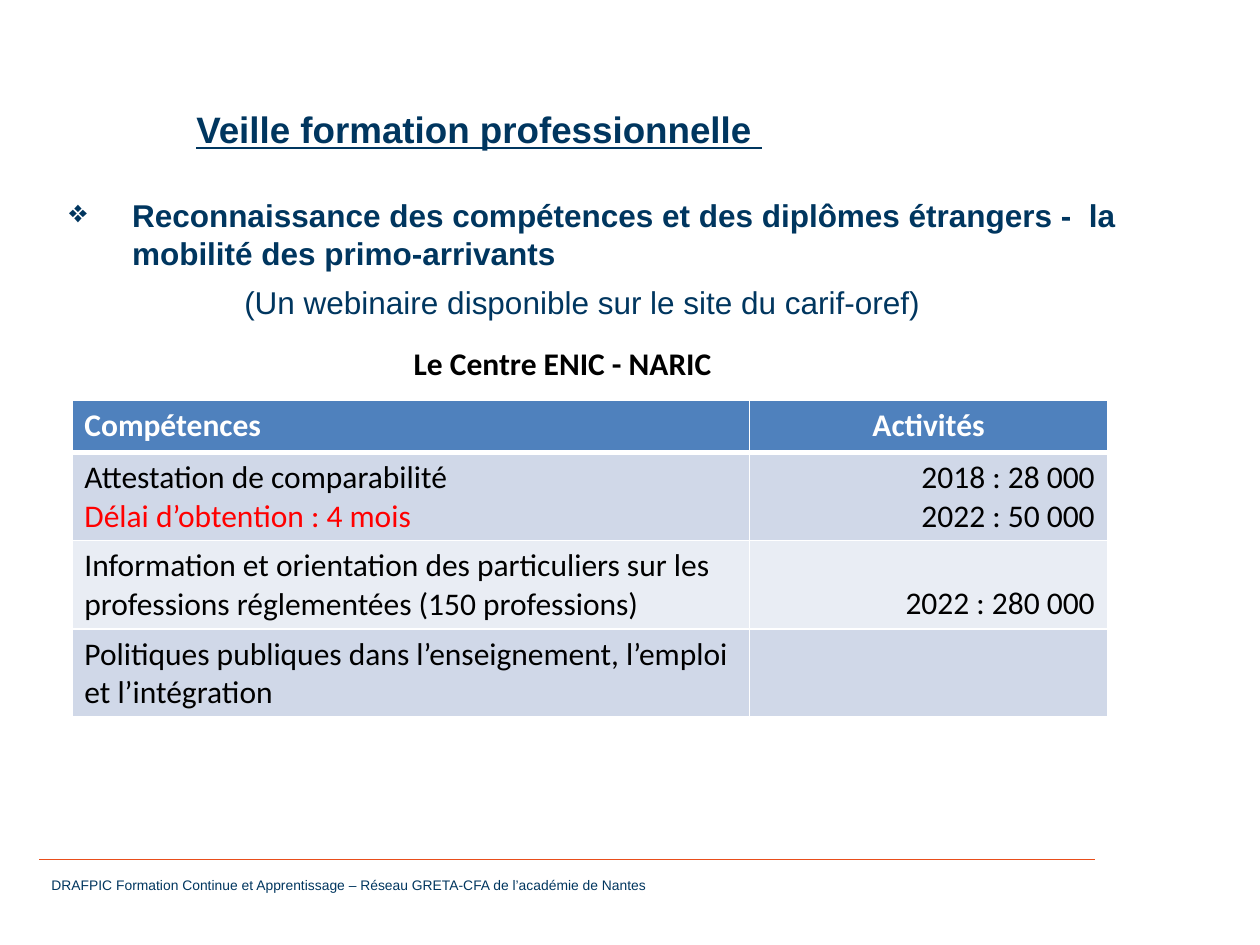
from dataclasses import dataclass

from lxml.etree import SubElement
from pptx import Presentation
from pptx.dml.color import RGBColor as Color
from pptx.enum.shapes import MSO_CONNECTOR as Connector
from pptx.enum.text import MSO_ANCHOR as Anchor, PP_ALIGN as Align
from pptx.oxml.ns import qn
from pptx.util import Inches, Pt


@dataclass(frozen=True)
class Theme:
    navy: str = "00365F"
    orange: str = "E94E1B"
    red: str = "FF0000"
    black: str = "000000"
    white: str = "FFFFFF"
    header: str = "4F81BD"
    bands: tuple = ("D0D8E8", "E9EDF4")
    heading: str = "Arial"
    body: str = "Calibri"
    title_size: float = 21
    text_size: float = 18
    footer_size: float = 7.9


THEME = Theme()

TITLE = "Veille formation professionnelle "
TOPIC = "Reconnaissance des compétences et des diplômes étrangers -  la mobilité des primo-arrivants"
WEBINAR = "(Un webinaire disponible sur le site du carif-oref)"
CENTRE = "Le Centre ENIC - NARIC"
FOOTER = "DRAFPIC Formation Continue et Apprentissage – Réseau GRETA-CFA de l’académie de Nantes"
DEADLINE = "Délai d’obtention : 4 mois"
ROWS = [
    (["Compétences"], ["Activités"]),
    (["Attestation de comparabilité", DEADLINE], ["2018 : 28 000", "2022 : 50 000"]),
    (["Information et orientation des particuliers sur les professions réglementées (150 professions)"],
     ["2022 : 280 000"]),
    (["Politiques publiques dans l’enseignement, l’emploi et l’intégration"], [""]),
]
COLUMN_WIDTHS = (5.38, 2.84)
ROW_HEIGHTS = (0.41, 0.7, 0.7, 0.7)


def set_font(para, name, size, color, bold=False, underline=None):
    """Style a whole paragraph."""
    font = para.font
    font.name, font.size, font.bold, font.underline = name, Pt(size), bold, underline
    font.color.rgb = Color.from_string(color)


def add_text(page, place, *lines):
    """Add a wrapping text box and return its paragraphs."""
    frame = page.shapes.add_textbox(*map(Inches, place)).text_frame
    frame.word_wrap = True
    frame.text = "\n".join(lines)
    return frame.paragraphs


def set_indent(para, left, first=0, bullet=None):
    """Indent a paragraph, with a hanging bullet if one is given."""
    props = para._p.get_or_add_pPr()
    props.set("marL", str(Inches(left)))
    props.set("indent", str(Inches(first)))
    if bullet:
        SubElement(props, qn("a:buChar"), char=bullet)


def add_borders(cell, bottom):
    """Draw white borders around a table cell."""
    props = cell._tc.get_or_add_tcPr()
    for side, points in (("L", 1), ("R", 1), ("T", 1), ("B", bottom)):
        line = SubElement(props, qn(f"a:ln{side}"), w=str(Pt(points)))
        fill = SubElement(line, qn("a:solidFill"))
        SubElement(fill, qn("a:srgbClr"), val=THEME.white)


def fill_cell(cell, lines, row, column):
    """Write and style one table cell."""
    is_header = row == 0
    add_borders(cell, 3 if is_header else 1)
    cell.fill.solid()
    cell.fill.fore_color.rgb = Color.from_string(THEME.header if is_header else THEME.bands[(row - 1) % 2])
    cell.text = "\n".join(lines)
    if column and not is_header:
        cell.vertical_anchor = Anchor.BOTTOM
    for para in cell.text_frame.paragraphs:
        if column:
            para.alignment = Align.CENTER if is_header else Align.RIGHT
        color = THEME.white if is_header else THEME.red if para.text == DEADLINE else THEME.black
        set_font(para, THEME.body, THEME.text_size, color, bold=is_header)


def add_activity_table(page):
    """Add the table of skills and activities."""
    place = (0.57, 3.18, sum(COLUMN_WIDTHS), sum(ROW_HEIGHTS))
    table = page.shapes.add_table(len(ROWS), len(COLUMN_WIDTHS), *map(Inches, place)).table
    for column, width in zip(table.columns, COLUMN_WIDTHS):
        column.width = Inches(width)
    for row, height in zip(table.rows, ROW_HEIGHTS):
        row.height = Inches(height)
    for row, cells in enumerate(ROWS):
        for column, lines in enumerate(cells):
            fill_cell(table.cell(row, column), lines, row, column)


def add_footer(page):
    """Add the footer rule and its text."""
    rule = page.shapes.add_connector(Connector.STRAIGHT, *map(Inches, (0.31, 6.82, 8.69, 6.82)))
    rule.line.color.rgb = Color.from_string(THEME.orange)
    rule.line.width = Pt(0.25)
    SubElement(rule._element.spPr, qn("a:effectLst"))
    footer, = add_text(page, (0.31, 6.91, 6.19, 0.23), FOOTER)
    set_font(footer, THEME.heading, THEME.footer_size, THEME.navy)


def main():
    """Build the slide and save it."""
    deck = Presentation()
    deck.slide_width, deck.slide_height = Inches(10), Inches(7.5)
    page = deck.slides.add_slide(deck.slide_layouts[6])
    add_footer(page)

    title, = add_text(page, (1.46, 0.8, 5.55, 0.45), TITLE)
    set_font(title, THEME.heading, THEME.title_size, THEME.navy, bold=True, underline=True)

    topic, webinar = add_text(page, (0.45, 1.51, 8.65, 1.48), TOPIC, WEBINAR)
    set_indent(topic, 0.5, -0.5, "❖")
    set_indent(webinar, 1.39)
    for para in (topic, webinar):
        para.space_after = Pt(6)
        set_font(para, THEME.heading, THEME.text_size, THEME.navy, bold=para is topic)

    add_activity_table(page)
    centre, = add_text(page, (1.62, 2.68, 5.69, 0.4), CENTRE)
    centre.alignment = Align.CENTER
    set_font(centre, THEME.body, THEME.text_size, THEME.black, bold=True)
    deck.save("out.pptx")


if __name__ == "__main__":
    main()
